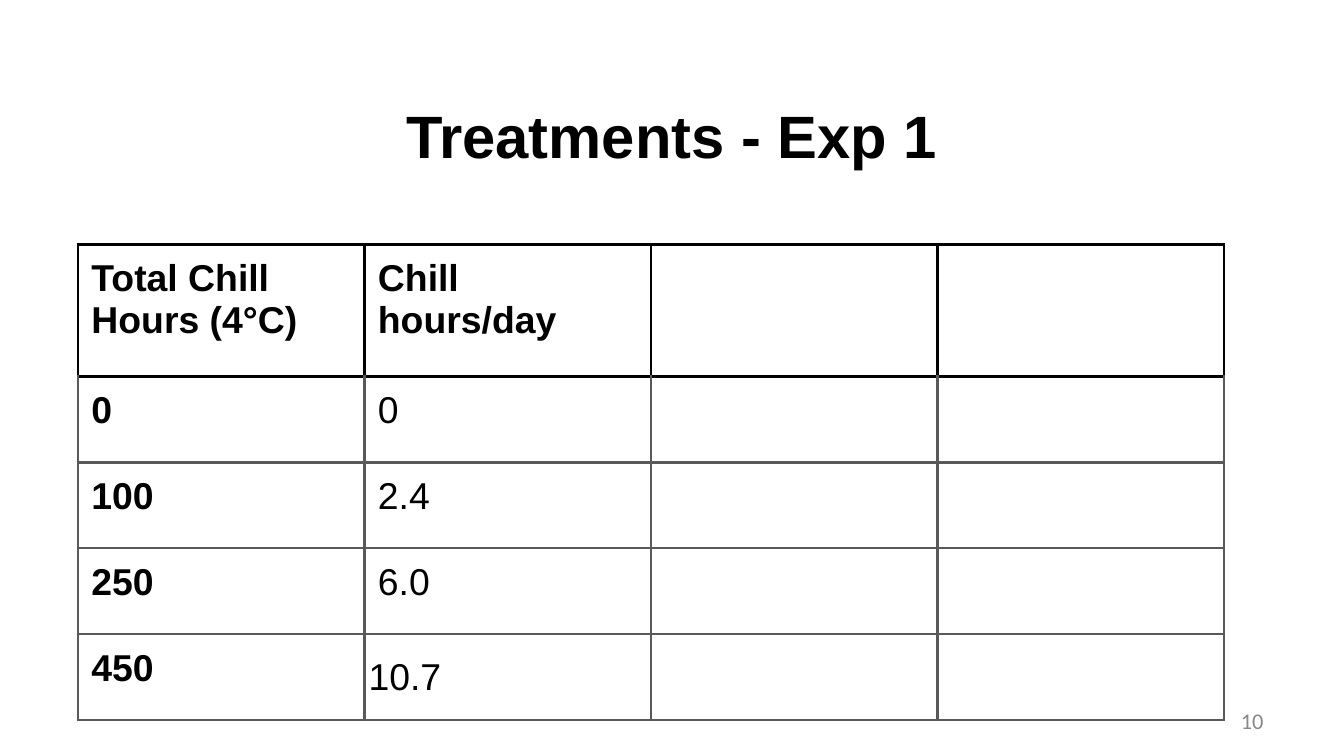
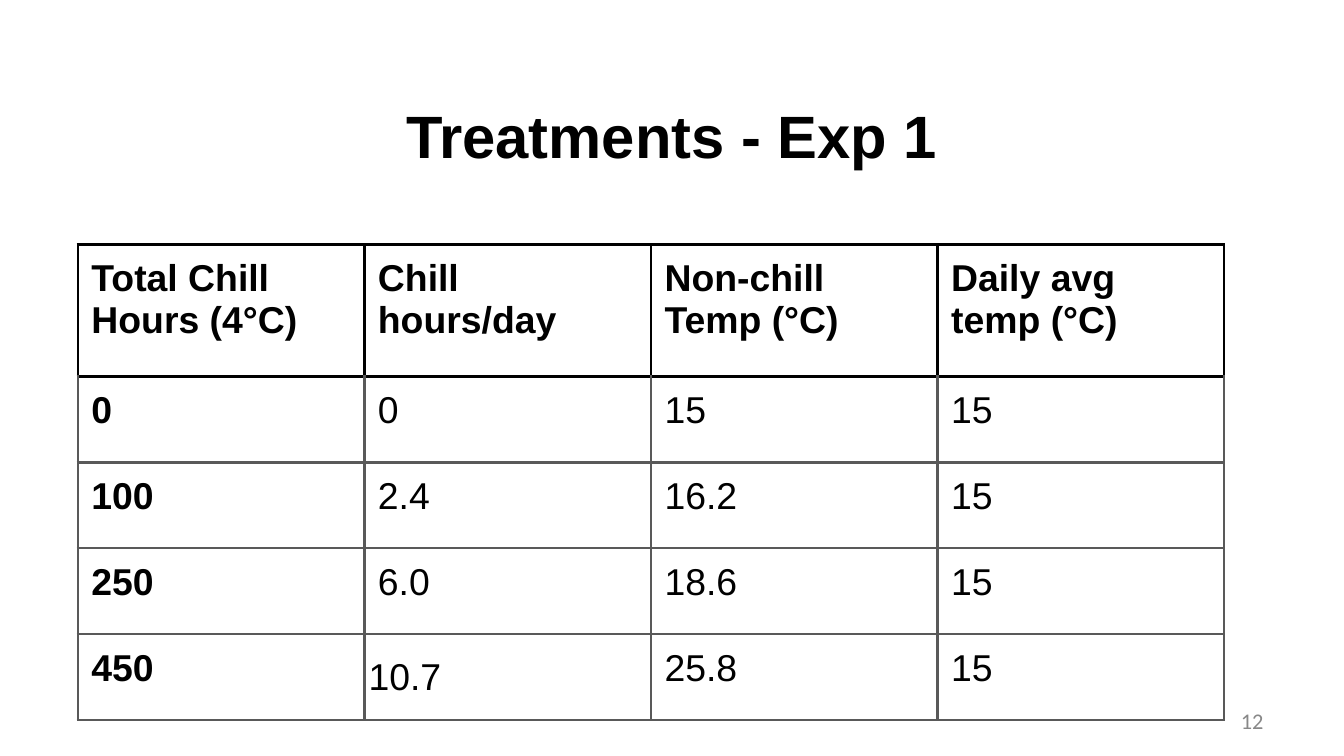
from dataclasses import dataclass

from lxml import etree
from pptx import Presentation
from pptx.dml.color import RGBColor
from pptx.enum.text import MSO_ANCHOR, PP_ALIGN
from pptx.oxml.ns import qn
from pptx.util import Inches, Pt

MIDDLE, TOP = MSO_ANCHOR.MIDDLE, MSO_ANCHOR.TOP
LEFT, CENTER, RIGHT = PP_ALIGN.LEFT, PP_ALIGN.CENTER, PP_ALIGN.RIGHT


@dataclass(frozen=True)
class Theme:
    ink: str = "000000"
    grid: str = "595959"
    muted: str = "888888"
    font: str = "Arial"
    page_font: str = "Calibri"
    title_size: int = 32
    cell_size: int = 20
    page_size: int = 12
    line: float = 1.5


THEME = Theme()

TITLE = "Treatments - Exp 1"
HEADS = ["Total Chill Hours (4°C)", "Chill hours/day",
         "Non-chill Temp (°C)", "Daily avg temp (°C)"]
DATA = [
    ["0", "0", "15", "15"],
    ["100", "2.4", "16.2", "15"],
    ["250", "6.0", "18.6", "15"],
    ["450", "10.7", "25.8", "15"],
]
TIGHT = (len(DATA), 1)  # the one cell with narrow margins, centred vertically
GRID_WIDTH, HEAD_HEIGHT, ROW_HEIGHT = 8.53, 0.98, 0.64

# Page number and count of filled columns on each slide
PAGES = [(10, 2), (12, 4)]


def style(para, size, color=THEME.ink, bold=False, font=THEME.font, align=LEFT):
    para.alignment = align
    para.font.name = font
    para.font.size = Pt(size)
    para.font.bold = bold
    para.font.color.rgb = RGBColor.from_string(color)


def add_text(slide, text, box, size, **look):
    frame = slide.shapes.add_textbox(*map(Inches, box)).text_frame
    frame.word_wrap = True
    frame.vertical_anchor = MIDDLE
    frame.text = text
    style(frame.paragraphs[0], size, **look)


def add_edge(cell, side, color):
    props = cell._tc.get_or_add_tcPr()
    line = etree.SubElement(props, qn(f"a:ln{side}"), w=str(Pt(THEME.line)))
    fill = etree.SubElement(line, qn("a:solidFill"))
    etree.SubElement(fill, qn("a:srgbClr"), val=color)


def fill_cell(cell, text, row, col):
    tight = (row, col) == TIGHT
    cell.margin_left = cell.margin_right = Inches(0.03 if tight else 0.1)
    cell.margin_top = cell.margin_bottom = Inches(0.02 if tight else 0.1)
    cell.vertical_anchor = MIDDLE if tight else TOP
    if text:
        cell.text = text
    style(cell.text_frame.paragraphs[0], THEME.cell_size,
          bold=row == 0 or col == 0)
    # Header edges are black, including the line it shares with the first row
    for side in "LRTB":
        dark = row == 0 or (row == 1 and side == "T")
        add_edge(cell, side, THEME.ink if dark else THEME.grid)
    cell.fill.background()


def add_grid(slide, shown):
    rows = [HEADS] + DATA
    heights = [HEAD_HEIGHT] + [ROW_HEIGHT] * len(DATA)
    table = slide.shapes.add_table(
        len(rows), len(HEADS), Inches(0.58), Inches(1.82),
        Inches(GRID_WIDTH), Inches(sum(heights))).table
    table.first_row = table.horz_banding = False
    for row, (texts, height) in enumerate(zip(rows, heights)):
        table.rows[row].height = Inches(height)
        for col, text in enumerate(texts):
            fill_cell(table.cell(row, col), text if col < shown else "",
                      row, col)


def add_page(deck, number, shown):
    slide = deck.slides.add_slide(deck.slide_layouts[6])
    add_text(slide, TITLE, (0.5, 0.56, 9, 0.88), THEME.title_size,
             bold=True, align=CENTER)
    add_grid(slide, shown)
    add_text(slide, str(number), (7.17, 5.21, 2.33, 0.3), THEME.page_size,
             color=THEME.muted, font=THEME.page_font, align=RIGHT)


def main():
    deck = Presentation()
    # Widescreen, 16 to 9
    deck.slide_width = Inches(10)
    deck.slide_height = Inches(10 * 9 / 16)
    for number, shown in PAGES:
        add_page(deck, number, shown)
    deck.save("out.pptx")


if __name__ == "__main__":
    main()
